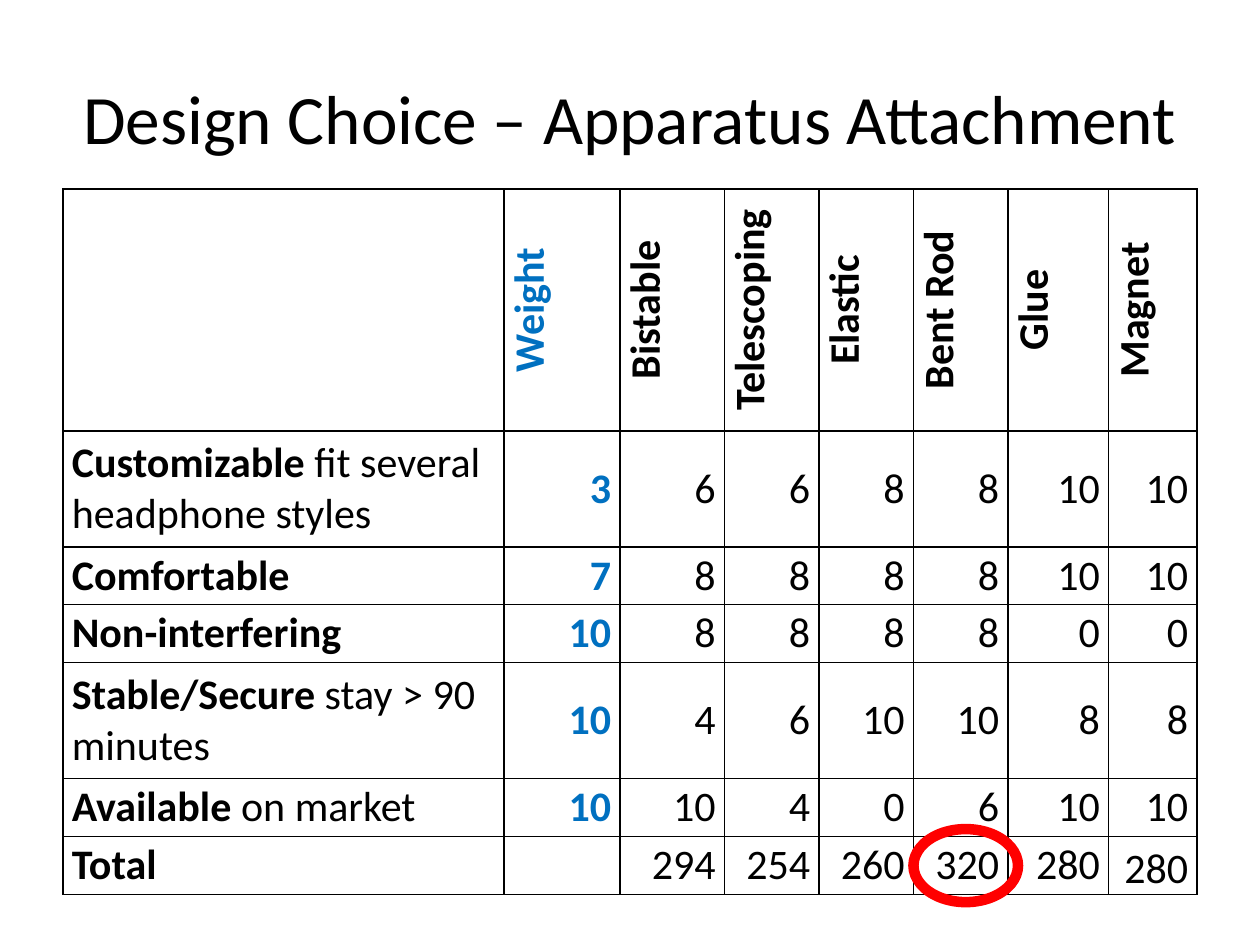
from lxml.etree import SubElement
from pptx import Presentation
from pptx.dml.color import RGBColor
from pptx.enum.shapes import MSO_SHAPE
from pptx.enum.text import MSO_ANCHOR as Anchor, PP_ALIGN as Align
from pptx.oxml.ns import qn
from pptx.util import Inches, Pt

BLACK, BLUE, RED = "000000", "0070C0", "FF0000"
CRITERIA = [
    ("Customizable", " fit several headphone styles", 3, [6, 6, 8, 8, 10, 10]),
    ("Comfortable", "", 7, [8, 8, 8, 8, 10, 10]),
    ("Non-interfering", "", 10, [8, 8, 8, 8, 0, 0]),
    ("Stable/Secure", " stay > 90 minutes", 10, [4, 6, 10, 10, 8, 8]),
    ("Available", " on market", 10, [10, 4, 0, 6, 10, 10]),
]
OPTIONS = ["Bistable", "Telescoping", "Elastic", "Bent Rod", "Glue", "Magnet"]
COLUMN_WIDTHS = [3.5, 0.92, 0.83, 0.75, 0.75, 0.75, 0.8, 0.7]
ROW_HEIGHTS = [1.92, 0.92, 0.46, 0.46, 0.92, 0.46, 0.46]


def rgb(value):
    return RGBColor.from_string(value)


def write(paragraph, text, size=24, color=BLACK, bold=False, align=Align.LEFT):
    paragraph.alignment = align
    run = paragraph.add_run()
    run.text = text
    run.font.name = "Calibri"
    run.font.size = Pt(size)
    run.font.bold = bold
    run.font.color.rgb = rgb(color)


def format_cell(cell):
    properties = cell._tc.get_or_add_tcPr()
    for side in ("lnL", "lnR", "lnT", "lnB"):
        border = SubElement(properties, qn(f"a:{side}"), w=str(Pt(1)))
        fill = SubElement(border, qn("a:solidFill"))
        SubElement(fill, qn("a:srgbClr"), val=BLACK)
    cell.fill.background()
    cell.vertical_anchor = Anchor.MIDDLE
    cell.margin_left = cell.margin_right = Inches(0.07)
    cell.margin_top = cell.margin_bottom = 0


def add_title(slide, left, top, width, height):
    title = slide.shapes.add_textbox(Inches(left), Inches(top), Inches(width), Inches(height))
    frame = title.text_frame
    frame.word_wrap = True
    frame.vertical_anchor = Anchor.MIDDLE
    write(frame.paragraphs[0], "Design Choice – Apparatus Attachment", size=39.6, align=Align.CENTER)


def fill_header(cells):
    for column, heading in enumerate(["Weight"] + OPTIONS, start=1):
        cells[column]._tc.get_or_add_tcPr().set("vert", "vert270")
        paragraph = cells[column].text_frame.paragraphs[0]
        write(paragraph, heading, color=BLUE if column == 1 else BLACK, bold=True, align=Align.CENTER)


def fill_row(cells, name, detail, weight, scores):
    label = cells[0].text_frame.paragraphs[0]
    write(label, name, bold=True)
    if detail:
        write(label, detail)
    if weight is not None:
        write(cells[1].text_frame.paragraphs[0], str(weight), color=BLUE, bold=True, align=Align.RIGHT)
    for cell, score in zip(cells[2:], scores):
        write(cell.text_frame.paragraphs[0], str(score), align=Align.RIGHT)


def add_matrix(slide, left, top, width, height):
    matrix = slide.shapes.add_table(
        len(ROW_HEIGHTS), len(COLUMN_WIDTHS),
        Inches(left), Inches(top), Inches(width), Inches(height),
    ).table
    matrix.first_row = matrix.horz_banding = False
    for column, column_width in zip(matrix.columns, COLUMN_WIDTHS):
        column.width = Inches(column_width)
    for row, row_height in zip(matrix.rows, ROW_HEIGHTS):
        row.height = Inches(row_height)
    for cell in matrix.iter_cells():
        format_cell(cell)
    rows = [list(row.cells) for row in matrix.rows]
    fill_header(rows[0])
    for cells, criterion in zip(rows[1:], CRITERIA):
        fill_row(cells, *criterion)
    totals = [
        sum(weight * scores[option] for _, _, weight, scores in CRITERIA)
        for option in range(len(OPTIONS))
    ]
    fill_row(rows[-1], "Total", "", None, totals)
    rows[-1][-1].vertical_anchor = Anchor.BOTTOM


def add_winner_ring(slide, left, top, width, height):
    ring = slide.shapes.add_shape(
        MSO_SHAPE.OVAL, Inches(left), Inches(top), Inches(width), Inches(height))
    ring.shadow.inherit = False
    ring.fill.background()
    ring.line.color.rgb = rgb(RED)
    ring.line.width = Pt(6)


def main():
    deck = Presentation()
    deck.slide_width, deck.slide_height = Inches(10), Inches(7.5)
    slide = deck.slides.add_slide(deck.slide_layouts[6])
    add_title(slide, 0.5, 0.3, 9, 1.25)
    add_matrix(slide, 0.5, 1.5, 9, 5.6)
    add_winner_ring(slide, 7.25, 6.58, 0.83, 0.58)
    deck.save("out.pptx")


if __name__ == "__main__":
    main()
